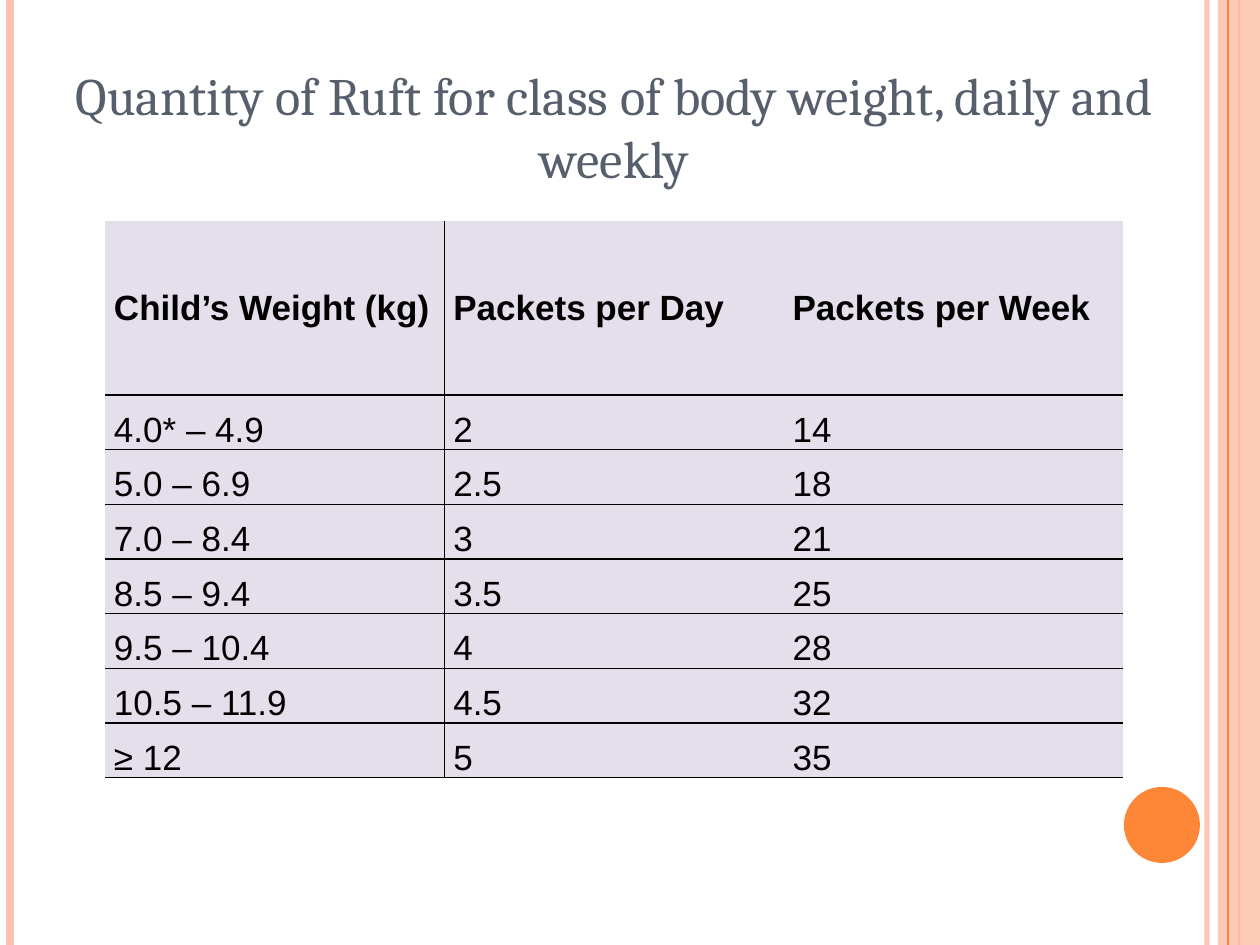
from dataclasses import dataclass

import pptx
import pptx.dml.color
import pptx.enum.shapes
import pptx.enum.text
import pptx.oxml.ns
import pptx.util
from lxml import etree

EMU_PER_PX = 914400 / 126
SLIDE_WIDTH, SLIDE_HEIGHT = 1260, 945
PEACH, ORANGE, SLATE, LILAC, BLACK = "FEC3AE", "FE8637", "575F6D", "E5DFEC", "000000"
ANCHOR = pptx.enum.text.MSO_ANCHOR
ALIGN = pptx.enum.text.PP_ALIGN
SHAPE = pptx.enum.shapes.MSO_SHAPE


@dataclass
class Stripe:
    """A full-height vertical line."""
    x: int
    color: str
    points: float
    opacity: int = 100


@dataclass
class Block:
    kind: int
    left: int
    top: int
    width: int
    height: int
    color: str
    opacity: int = 100


BACK_STRIPES = [Stripe(1207, PEACH, 3, 93), Stripe(10, PEACH, 4.5), Stripe(1239, ORANGE, 1.5)]
BAND = Block(SHAPE.RECTANGLE, 1218, 0, 42, SLIDE_HEIGHT, PEACH, 87)
FRONT_STRIPE = Stripe(1228, ORANGE, 0.75)
DISC = Block(SHAPE.OVAL, 1124, 787, 76, 76, ORANGE)

TITLE = "Quantity of Ruft for class of body weight, daily and weekly"
ROWS = [
    ("Child’s Weight (kg)", "Packets per Day", "Packets per Week"),
    ("4.0* – 4.9", "2", "14"),
    ("5.0 – 6.9", "2.5", "18"),
    ("7.0 – 8.4", "3", "21"),
    ("8.5 – 9.4", "3.5", "25"),
    ("9.5 – 10.4", "4", "28"),
    ("10.5 – 11.9", "4.5", "32"),
    ("≥ 12", "5", "35"),
]
TABLE_LEFT, TABLE_TOP, TABLE_WIDTH = 105, 221, 1018
HEADER_HEIGHT, BODY_HEIGHT = 174, 383


def px(length: int) -> int:
    return round(length * EMU_PER_PX)


def rgb(color: str) -> pptx.dml.color.RGBColor:
    return pptx.dml.color.RGBColor.from_string(color)


def add_child(parent, tag: str, **attributes: str):
    return etree.SubElement(parent, pptx.oxml.ns.qn(tag), attributes)


def paint(fill, color: str, element, opacity: int = 100) -> None:
    """Fill with a solid colour; element is the shape's XML, which takes the opacity."""
    fill.solid()
    fill.fore_color.rgb = rgb(color)
    if opacity < 100:
        color_element = next(element.iter(pptx.oxml.ns.qn("a:srgbClr")))
        add_child(color_element, "a:alpha", val=str(opacity * 1000))


def add_stripe(slide, stripe: Stripe) -> None:
    connector = slide.shapes.add_connector(
        pptx.enum.shapes.MSO_CONNECTOR.STRAIGHT, px(stripe.x), 0, px(stripe.x), px(SLIDE_HEIGHT))
    connector.line.width = pptx.util.Pt(stripe.points)
    properties = connector._element.spPr
    paint(connector.line.fill, stripe.color, properties, stripe.opacity)
    add_child(properties, "a:effectLst")


def add_block(slide, block: Block) -> None:
    shape = slide.shapes.add_shape(
        block.kind, px(block.left), px(block.top), px(block.width), px(block.height))
    shape.shadow.inherit = False
    shape.line.fill.background()
    paint(shape.fill, block.color, shape._element.spPr, block.opacity)


def style_paragraph(paragraph, font: str, size: int, color: str, alignment: int) -> None:
    paragraph.alignment = alignment
    paragraph.font.name = font
    paragraph.font.size = pptx.util.Pt(size)
    paragraph.font.color.rgb = rgb(color)


def add_title(slide) -> None:
    frame = slide.shapes.add_textbox(px(32), px(38), px(1165), px(157)).text_frame
    frame.word_wrap = True
    frame.vertical_anchor = ANCHOR.BOTTOM
    frame.text = TITLE
    style_paragraph(frame.paragraphs[0], "Cambria", 30, SLATE, ALIGN.CENTER)


def set_borders(cell, visible: set[str]) -> None:
    """Draw the sides named in visible (L, R, T, B) and clear the others."""
    properties = cell._tc.get_or_add_tcPr()
    for side in "LRTB":
        line = add_child(properties, f"a:ln{side}", w=str(pptx.util.Pt(1)))
        if side in visible:
            add_child(add_child(line, "a:solidFill"), "a:srgbClr", val=BLACK)
        else:
            add_child(line, "a:noFill")


def fill_cell(cell, text: str, row: int, column: int) -> None:
    cell.text = text
    cell.margin_left = cell.margin_right = px(9)
    cell.margin_top = cell.margin_bottom = 0
    cell.vertical_anchor = ANCHOR.BOTTOM if row else ANCHOR.MIDDLE
    paragraph = cell.text_frame.paragraphs[0]
    style_paragraph(paragraph, "Arial", 20, BLACK, ALIGN.JUSTIFY)
    paragraph.font.bold = row == 0
    sides = {"B"} | ({"T"} if row else set())
    sides |= {0: {"R"}, 1: {"L"}}.get(column, set())
    set_borders(cell, sides)
    paint(cell.fill, LILAC, cell._tc)


def add_weight_table(slide) -> None:
    table = slide.shapes.add_table(
        len(ROWS), len(ROWS[0]), px(TABLE_LEFT), px(TABLE_TOP),
        px(TABLE_WIDTH), px(HEADER_HEIGHT + BODY_HEIGHT)).table
    table.first_row = table.horz_banding = False
    for row, texts in enumerate(ROWS):
        table.rows[row].height = px(BODY_HEIGHT) // (len(ROWS) - 1) if row else px(HEADER_HEIGHT)
        for column, text in enumerate(texts):
            fill_cell(table.cell(row, column), text, row, column)


def main() -> None:
    presentation = pptx.Presentation()
    presentation.slide_width = px(SLIDE_WIDTH)
    presentation.slide_height = px(SLIDE_HEIGHT)
    slide = presentation.slides.add_slide(presentation.slide_layouts[6])
    for stripe in BACK_STRIPES:
        add_stripe(slide, stripe)
    add_block(slide, BAND)
    add_stripe(slide, FRONT_STRIPE)
    add_block(slide, DISC)
    add_title(slide)
    add_weight_table(slide)
    presentation.save("out.pptx")


if __name__ == "__main__":
    main()
